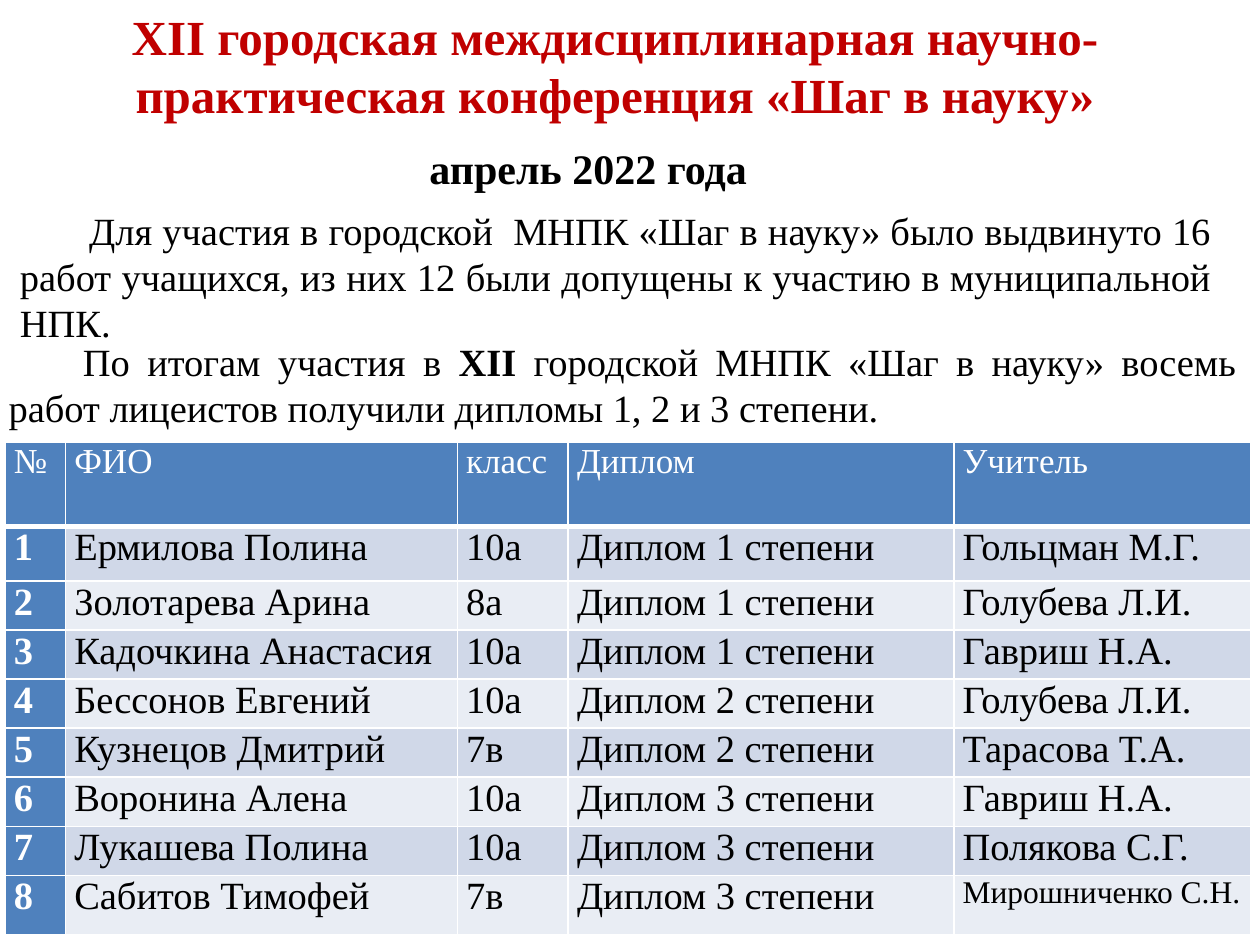
import pptx
import pptx.dml.color
import pptx.enum.text
import pptx.oxml.ns
import pptx.util
from lxml import etree

Inches = pptx.util.Inches
Pt = pptx.util.Pt
ALIGN = pptx.enum.text.PP_ALIGN

HEADER = ["№", "ФИО", "класс", "Диплом", "Учитель"]
WINNERS = [
    ("Ермилова Полина", "10а", 1, "Гольцман М.Г."),
    ("Золотарева Арина", "8а", 1, "Голубева Л.И."),
    ("Кадочкина Анастасия", "10а", 1, "Гавриш Н.А."),
    ("Бессонов Евгений", "10а", 2, "Голубева Л.И."),
    ("Кузнецов Дмитрий", "7в", 2, "Тарасова Т.А."),
    ("Воронина Алена", "10а", 3, "Гавриш Н.А."),
    ("Лукашева Полина", "10а", 3, "Полякова С.Г."),
    ("Сабитов Тимофей", "7в", 3, "Мирошниченко С.Н."),
]
COLUMN_WIDTHS = [0.48, 3.11, 0.88, 3.06, 2.36]
ROW_HEIGHTS = [0.67, 0.43] + [0.39] * 6 + [0.47]


def color(hex_string):
    return pptx.dml.color.RGBColor.from_string(hex_string)


class ConferenceSlide:
    font = "Times New Roman"
    black, white, red = "000000", "FFFFFF", "C00000"
    blue, bands = "4F81BD", ("E9EDF4", "D0D8E8")

    def __init__(self, slide):
        self.slide = slide

    def format_run(self, run, size, hex_string, bold):
        run.font.name = self.font
        run.font.size = Pt(size)
        run.font.bold = bold
        run.font.color.rgb = color(hex_string)

    def text(self, left, top, width, height, runs, size, hex_string=black,
             align=ALIGN.LEFT, indent=0):
        """Add a one-paragraph text box; runs are (text, bold) pairs."""
        box = self.slide.shapes.add_textbox(
            Inches(left), Inches(top), Inches(width), Inches(height))
        frame = box.text_frame
        frame.word_wrap = True
        frame.auto_size = pptx.enum.text.MSO_AUTO_SIZE.SHAPE_TO_FIT_TEXT
        paragraph = frame.paragraphs[0]
        paragraph.alignment = align
        if indent:
            paragraph._p.get_or_add_pPr().set("indent", str(Inches(indent)))
        for words, bold in runs:
            run = paragraph.add_run()
            run.text = words
            self.format_run(run, size, hex_string, bold)

    def borders(self, cell, top, bottom):
        """Draw white cell borders; top and bottom are widths in points."""
        properties = cell._tc.get_or_add_tcPr()
        qn = pptx.oxml.ns.qn
        for side, width in (("L", 1), ("R", 1), ("T", top), ("B", bottom)):
            line = etree.SubElement(properties, qn(f"a:ln{side}"), w=str(Pt(width)))
            fill = etree.SubElement(line, qn("a:solidFill"))
            etree.SubElement(fill, qn("a:srgbClr"), val=self.white)

    def cell(self, cell, words, row, column):
        header = row == 0
        accent = header or column == 0
        self.borders(cell, 3 if row == 1 else 1, 3 if header else 1)
        cell.fill.solid()
        cell.fill.fore_color.rgb = color(self.blue if accent else self.bands[row % 2])
        cell.margin_left = cell.margin_right = Inches(0.07)
        cell.margin_top = cell.margin_bottom = 0
        cell.text_frame.text = words
        paragraph = cell.text_frame.paragraphs[0]
        paragraph.alignment = ALIGN.JUSTIFY
        long_teacher = column == 4 and len(words) > 15
        size = 20 if header else 18 if long_teacher else 22
        self.format_run(paragraph.runs[0], size,
                        self.white if accent else self.black,
                        column == 0 and not header)

    def table(self, left, top, rows, widths, heights):
        table = self.slide.shapes.add_table(
            len(rows), len(widths), Inches(left), Inches(top),
            Inches(sum(widths)), Inches(sum(heights))).table
        for column, width in zip(table.columns, widths):
            column.width = Inches(width)
        for row, height in zip(table.rows, heights):
            row.height = Inches(height)
        for row, values in enumerate(rows):
            for column, words in enumerate(values):
                self.cell(table.cell(row, column), words, row, column)


def main():
    presentation = pptx.Presentation()
    presentation.slide_width = Inches(10)
    presentation.slide_height = Inches(7.5)
    page = ConferenceSlide(presentation.slides.add_slide(presentation.slide_layouts[6]))

    page.text(0, 0, 9.76, 1.04, [
        ("XII городская междисциплинарная научно-практическая конференция "
         "«Шаг в науку»", True)], 28, page.red, ALIGN.CENTER)
    page.text(0.06, 1.59, 9.65, 1.21, [
        ("Для участия в городской  МНПК «Шаг в науку» было выдвинуто 16 работ "
         "учащихся, из них 12 были допущены к участию в муниципальной НПК.", False)],
        22, align=ALIGN.JUSTIFY, indent=0.55)
    page.text(3.31, 1.08, 3.39, 0.5, [("апрель 2022 года", True)], 24)
    page.text(-0.03, 2.63, 9.94, 0.84, [
        ("По итогам участия в ", False), ("XII", True),
        (" городской МНПК «Шаг в науку» восемь работ лицеистов получили "
         "дипломы 1, 2 и 3 степени.", False)],
        22, align=ALIGN.JUSTIFY, indent=0.59)

    rows = [HEADER] + [
        [str(number), name, grade, f"Диплом {degree} степени", teacher]
        for number, (name, grade, degree, teacher) in enumerate(WINNERS, 1)]
    page.table(0.04, 3.51, rows, COLUMN_WIDTHS, ROW_HEIGHTS)

    presentation.save("out.pptx")


if __name__ == "__main__":
    main()
